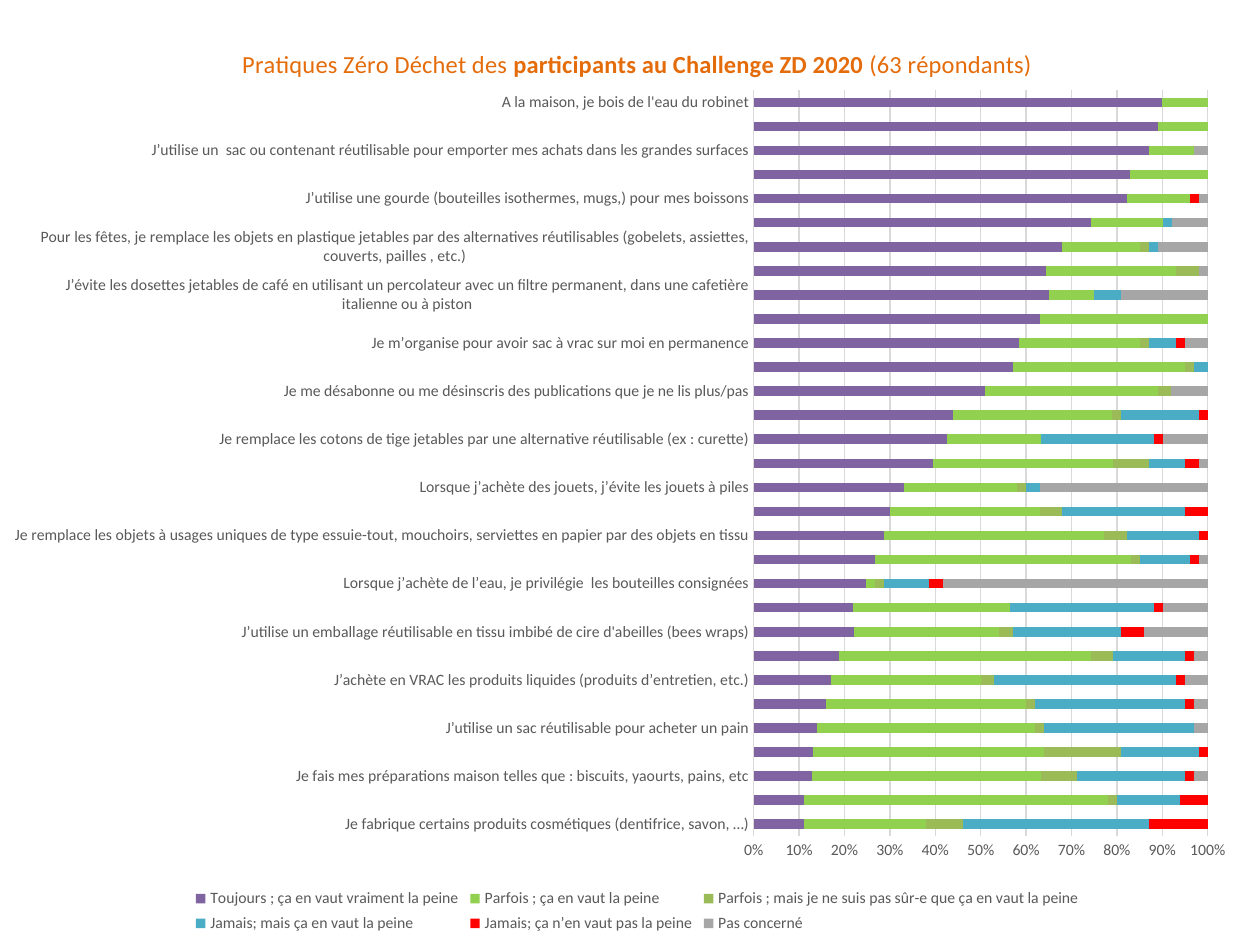
from lxml.etree import SubElement
from pptx import Presentation
from pptx.chart.data import CategoryChartData
from pptx.dml.color import RGBColor
from pptx.enum.chart import XL_CHART_TYPE, XL_LEGEND_POSITION, XL_TICK_MARK
from pptx.oxml import parse_xml
from pptx.oxml.ns import nsdecls, qn
from pptx.util import Cm, Pt

FONT = "Calibri"
ORANGE = "E46C0A"
TEXT_GREY = "595959"
LINE_GREY = "D9D9D9"

PRACTICES = [
    "Je fabrique certains produits cosmétiques (dentifrice, savon, …)",
    "J’achète mes vêtements en seconde main",
    "Je fais mes préparations maison telles que : biscuits, yaourts, pains, etc",
    "Je privilégie les appareils manuels, j’évite les appareils électriques ou nécessitants des piles",
    "J’utilise un sac réutilisable pour acheter un pain",
    "J’achète en VRAC les produits « à la découpe » (charcuterie, laiterie, etc. )",
    "J’achète en VRAC les produits liquides (produits d’entretien, etc.)",
    "Je cuisine les fanes de légumes, la peau des fruits, je transforme les fruits trop mûrs en smoothies ou confitures et le",
    "J’utilise un emballage réutilisable en tissu imbibé de cire d'abeilles (bees wraps)",
    "J'emballe les cadeaux avec des tissus réutilisables (furoshiki)",
    "Lorsque j’achète de l’eau, je privilégie  les bouteilles consignées",
    "J’achète en VRAC les produits secs (pâtes, riz, céréales, farine, etc.)",
    "Je remplace les objets à usages uniques de type essuie-tout, mouchoirs, serviettes en papier par des objets en tissu",
    "Je fabrique certains produits d’entretien (maison, lessive, ..)",
    "Lorsque j’achète des jouets, j’évite les jouets à piles",
    "Je me limite à 1 ou 2 produits différents pour l’entretien de ma maison",
    "Je remplace les cotons de tige jetables par une alternative réutilisable (ex : curette)",
    "Je range une fois par semaine le frigo pour éviter d’oublier des aliments",
    "Je me désabonne ou me désinscris des publications que je ne lis plus/pas",
    "Je fais mes préparations maison telles que : vinaigrettes, soupes, sauces, houmous, crêpes,",
    "Je m’organise pour avoir sac à vrac sur moi en permanence",
    "Je cuisine les repas en tenant compte de ce qui est encore disponible à la maison et des restes à consommer",
    "J’évite les dosettes jetables de café en utilisant un percolateur avec un filtre permanent, dans une cafetière italienne ou à piston",
    "Je fais une liste avant d’aller faire les courses",
    "Pour les fêtes, je remplace les objets en plastique jetables par des alternatives réutilisables (gobelets, assiettes, couverts, pailles , etc.)",
    "Pour mon repas de midi (lunch), j'utilise des contenants réutilisables (boîtes à tartine, sacs en tissus, boîtes à biscu",
    "J’utilise une gourde (bouteilles isothermes, mugs,) pour mes boissons",
    "J’utilise un  sac ou contenant réutilisable pour emporter mes achats dans les petits commerces",
    "J’utilise un  sac ou contenant réutilisable pour emporter mes achats dans les grandes surfaces",
    "Je nettoie avec du matériel réutilisable (torchon, chiffons, etc au lieu de lingettes)",
    "A la maison, je bois de l'eau du robinet",
]

ANSWERS = [
    ("Toujours ; ça en vaut vraiment la peine", "8064A2",
     [11, 11, 13, 13, 14, 16, 17, 19, 22, 22, 25, 27, 29, 30, 33, 40,
      43, 44, 51, 57, 59, 63, 65, 65, 68, 75, 83, 83, 87, 89, 90]),
    ("Parfois ; ça en vaut la peine", "92D050",
     [27, 67, 51, 51, 48, 44, 33, 56, 32, 35, 2, 57, 49, 33, 25, 40,
      21, 35, 38, 38, 27, 37, 10, 29, 17, 16, 14, 17, 10, 11, 10]),
    ("Parfois ; mais je ne suis pas sûr-e que ça en vaut la peine", "9BBB59",
     [8, 2, 8, 17, 2, 2, 3, 5, 3, 0, 2, 2, 5, 5, 2, 8,
      0, 2, 3, 2, 2, 0, 0, 5, 2, 0, 0, 0, 0, 0, 0]),
    ("Jamais; mais ça en vaut la peine", "4BACC6",
     [41, 14, 24, 17, 33, 33, 40, 16, 24, 32, 10, 11, 16, 27, 3, 8,
      25, 17, 0, 3, 6, 0, 6, 0, 2, 2, 0, 0, 0, 0, 0]),
    ("Jamais; ça n’en vaut pas la peine", "FF0000",
     [13, 6, 2, 2, 0, 2, 2, 2, 5, 2, 3, 2, 2, 5, 0, 3,
      2, 2, 0, 0, 2, 0, 0, 0, 0, 0, 2, 0, 0, 0, 0]),
    ("Pas concerné", "A6A6A6",
     [0, 0, 3, 0, 3, 3, 5, 3, 14, 10, 59, 2, 0, 0, 37, 2,
      10, 0, 8, 0, 5, 0, 19, 2, 11, 8, 2, 0, 3, 0, 0]),
]


def color(value):
    return RGBColor.from_string(value)


def format_font(font, size, text_color, bold=False):
    font.name = FONT
    font.size = Pt(size)
    font.bold = bold
    font.color.rgb = color(text_color)


def add_text(paragraph, text, size=14, text_color=ORANGE, bold=False):
    run = paragraph.add_run()
    run.text = text
    format_font(run.font, size, text_color, bold)


def format_line(line, line_color=LINE_GREY):
    line.width = Pt(0.75)
    line.color.rgb = color(line_color)


def place_element(element, index, inner=False, **fractions):
    for layout in element.findall(qn("c:layout")):
        element.remove(layout)
    layout = parse_xml(f"<c:layout {nsdecls('c')}><c:manualLayout/></c:layout>")
    manual = layout[0]
    if inner:
        SubElement(manual, qn("c:layoutTarget")).set("val", "inner")
    for axis in ("x", "y"):
        SubElement(manual, qn(f"c:{axis}Mode")).set("val", "edge")
    for name, value in fractions.items():
        SubElement(manual, qn(f"c:{name}")).set("val", str(value))
    element.insert(index, layout)


def add_practice_chart(slide):
    data = CategoryChartData(number_format="General")
    data.categories = PRACTICES
    for name, _, values in ANSWERS:
        data.add_series(name, values)
    frame = slide.shapes.add_chart(
        XL_CHART_TYPE.BAR_STACKED_100, Cm(0.3), Cm(0.13), Cm(24.79), Cm(18.8), data)
    chart = frame.chart
    format_font(chart.font, 10, "000000")
    plot = chart.plots[0]
    plot.gap_width = 150
    plot.overlap = 100
    plot.vary_by_categories = False
    for series, (_, fill_color, _) in zip(plot.series, ANSWERS):
        series.format.fill.solid()
        series.format.fill.fore_color.rgb = color(fill_color)
        series.invert_if_negative = False
    return chart


def format_axes(chart):
    for axis in (chart.category_axis, chart.value_axis):
        axis.major_tick_mark = XL_TICK_MARK.NONE
        axis.minor_tick_mark = XL_TICK_MARK.NONE
        format_font(axis.tick_labels.font, 9, TEXT_GREY)
    format_line(chart.category_axis.format.line)
    values = chart.value_axis
    values.minimum_scale = 0
    values.maximum_scale = 1
    values.major_unit = 0.1
    values.tick_labels.number_format = "0%"
    values.tick_labels.number_format_is_linked = False
    values.format.line.fill.background()
    values.has_major_gridlines = True
    format_line(values.major_gridlines.format.line)


def add_title(chart):
    chart.has_title = True
    chart.chart_title.include_in_layout = False
    paragraph = chart.chart_title.text_frame.paragraphs[0]
    add_text(paragraph, "Pratiques Zéro Déchet des ")
    add_text(paragraph, "participants au Challenge ZD 2020", bold=True)
    add_text(paragraph, " (63 répondants)")


def add_legend(chart):
    chart.has_legend = True
    chart.legend.position = XL_LEGEND_POSITION.BOTTOM
    chart.legend.include_in_layout = False
    format_font(chart.legend.font, 9, TEXT_GREY)


def arrange_chart(chart):
    root = chart.element if hasattr(chart, "element") else chart._chartSpace
    chart_element = root.find(qn("c:chart"))
    place_element(chart_element.find(qn("c:title")), 1, x=0.18, y=0.04)
    place_element(chart_element.find(qn("c:plotArea")), 0, inner=True,
                  x=0.6, y=0.09, w=0.37, h=0.8)
    place_element(chart_element.find(qn("c:legend")), 1, x=0.14, y=0.94, w=0.73, h=0.06)


def main():
    presentation = Presentation()
    presentation.slide_width = Cm(25.4)
    presentation.slide_height = Cm(19.05)
    slide = presentation.slides.add_slide(presentation.slide_layouts[6])
    chart = add_practice_chart(slide)
    format_axes(chart)
    add_title(chart)
    add_legend(chart)
    arrange_chart(chart)
    presentation.save("out.pptx")


if __name__ == "__main__":
    main()
